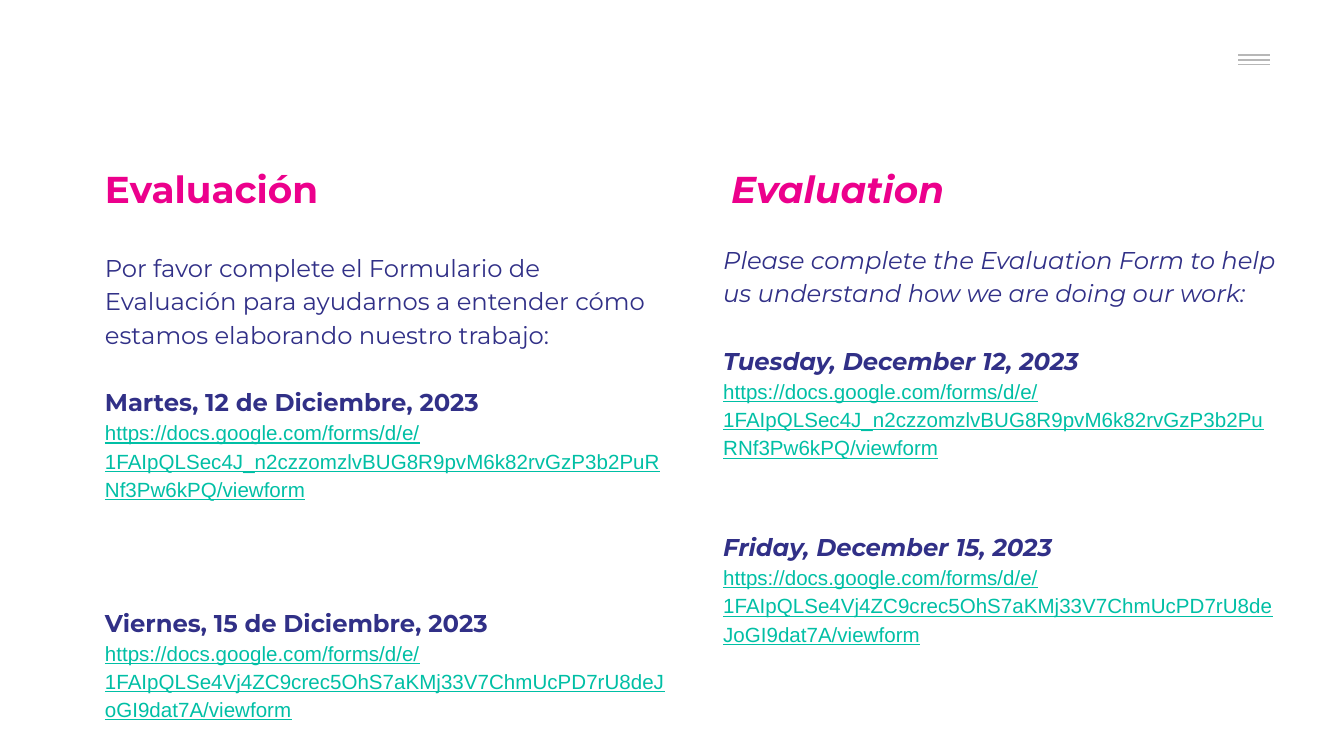
"""Build the bilingual evaluation slide."""
from dataclasses import dataclass

from lxml import etree
from pptx import Presentation
from pptx.dml.color import RGBColor
from pptx.enum import shapes, text
from pptx.oxml import ns
from pptx.util import Pt

WHITE = RGBColor(0xFF, 0xFF, 0xFF)
GRAY = RGBColor(0xB7, 0xB7, 0xB7)
PINK = RGBColor(0xEC, 0x00, 0x8C)
NAVY = RGBColor(0x31, 0x30, 0x87)
TEAL = RGBColor(0x00, 0xBF, 0xA5)
BLANK_LINE = 18.2
FORM_URL = "https://docs.google.com/forms/d/e/{}/viewform"
TUESDAY_URL = FORM_URL.format("1FAIpQLSec4J_n2czzomzlvBUG8R9pvM6k82rvGzP3b2PuRNf3Pw6kPQ")
FRIDAY_URL = FORM_URL.format("1FAIpQLSe4Vj4ZC9crec5OhS7aKMj33V7ChmUcPD7rU8deJoGI9dat7A")


@dataclass(frozen=True)
class Box:
    left: float
    top: float
    width: float
    height: float


@dataclass(frozen=True)
class Style:
    size: float
    color: RGBColor
    font: str = "Montserrat"
    bold: bool = False
    underline: bool = False


@dataclass(frozen=True)
class Line:
    content: str
    style: Style
    space_before: float = 0
    spacing: float = 1.15


@dataclass(frozen=True)
class Column:
    title_index: int
    body_index: int
    title_box: Box
    body_box: Box
    title: str
    request: str
    tuesday: str
    friday: str
    blank_lines: int
    italic: bool


TITLE = Style(20, PINK, bold=True)
BODY = Style(13, NAVY)
DATE = Style(13, NAVY, bold=True)
LINK = Style(11, TEAL, font="Arial", underline=True)

COLUMNS = [
    Column(0, 2, Box(49, 82, 303.8, 42.5), Box(49, 126, 315.4, 141.1),
           "Evaluación",
           "Por favor complete el Formulario de Evaluación para ayudarnos a "
           "entender cómo estamos elaborando nuestro trabajo:",
           "Martes, 12 de Diciembre, 2023", "Viernes, 15 de Diciembre, 2023", 3, False),
    Column(1, 4, Box(384.5, 82, 303.8, 42.5), Box(380.2, 121.7, 311.8, 255.6),
           "Evaluation",
           "Please complete the Evaluation Form to help us understand how we "
           "are doing our work:",
           "Tuesday, December 12, 2023", "Friday, December 15, 2023", 2, True),
]


def fill_placeholder(shape, box: Box, lines: list[Line], italic: bool) -> None:
    shape.left, shape.top = Pt(box.left), Pt(box.top)
    shape.width, shape.height = Pt(box.width), Pt(box.height)
    frame = shape.text_frame
    frame.text = "\n".join(line.content for line in lines)
    frame.word_wrap = True
    frame.auto_size = text.MSO_AUTO_SIZE.NONE
    frame.vertical_anchor = text.MSO_ANCHOR.TOP
    frame.margin_left = frame.margin_right = Pt(7.2)
    frame.margin_top = frame.margin_bottom = Pt(7.2)
    for paragraph, line in zip(frame.paragraphs, lines):
        properties = paragraph._p.get_or_add_pPr()
        properties.set("marL", "0")
        properties.set("indent", "0")
        etree.SubElement(properties, ns.qn("a:buNone"))
        paragraph.alignment = text.PP_ALIGN.LEFT
        paragraph.line_spacing = line.spacing
        paragraph.space_before = Pt(line.space_before)
        paragraph.space_after = Pt(0)
        for run in paragraph.runs:
            run.font.name = line.style.font
            run.font.size = Pt(line.style.size)
            run.font.color.rgb = line.style.color
            run.font.bold = line.style.bold
            run.font.underline = line.style.underline
            run.font.italic = italic and line.style is not LINK


def add_column(slide, column: Column) -> None:
    placeholders = {shape.placeholder_format.idx: shape for shape in slide.placeholders}
    title = placeholders[column.title_index]
    fill_placeholder(title, column.title_box, [Line(column.title, TITLE, spacing=1)],
                     column.italic)
    title.fill.solid()
    title.fill.fore_color.rgb = WHITE
    fill_placeholder(placeholders[column.body_index], column.body_box, [
        Line(column.request, BODY),
        Line(column.tuesday, DATE, BLANK_LINE),
        Line(TUESDAY_URL, LINK),
        Line(column.friday, DATE, column.blank_lines * BLANK_LINE),
        Line(FRIDAY_URL, LINK),
    ], column.italic)


def add_menu_icon(slide) -> None:
    panel = slide.shapes.add_shape(shapes.MSO_SHAPE.RECTANGLE,
                                   Pt(638), Pt(12.2), Pt(67.7), Pt(36))
    panel.shadow.inherit = False
    panel.fill.solid()
    panel.fill.fore_color.rgb = WHITE
    panel.line.fill.background()
    for row in range(3):
        height = Pt(29.5 + 2.6 * row)
        bar = slide.shapes.add_connector(shapes.MSO_CONNECTOR.STRAIGHT,
                                         Pt(663.3), height, Pt(680.4), height)
        bar.line.color.rgb = GRAY
        bar.line.width = Pt(0.75)
        etree.SubElement(bar._element.spPr, ns.qn("a:effectLst"))


def main() -> None:
    presentation = Presentation()
    presentation.slide_width, presentation.slide_height = Pt(720), Pt(405)
    slide = presentation.slides.add_slide(
        presentation.slide_layouts.get_by_name("Comparison"))
    add_menu_icon(slide)
    for column in COLUMNS:
        add_column(slide, column)
    for shape in list(slide.placeholders):
        if not shape.text_frame.text:
            shape._element.getparent().remove(shape._element)
    presentation.save("out.pptx")


if __name__ == "__main__":
    main()
